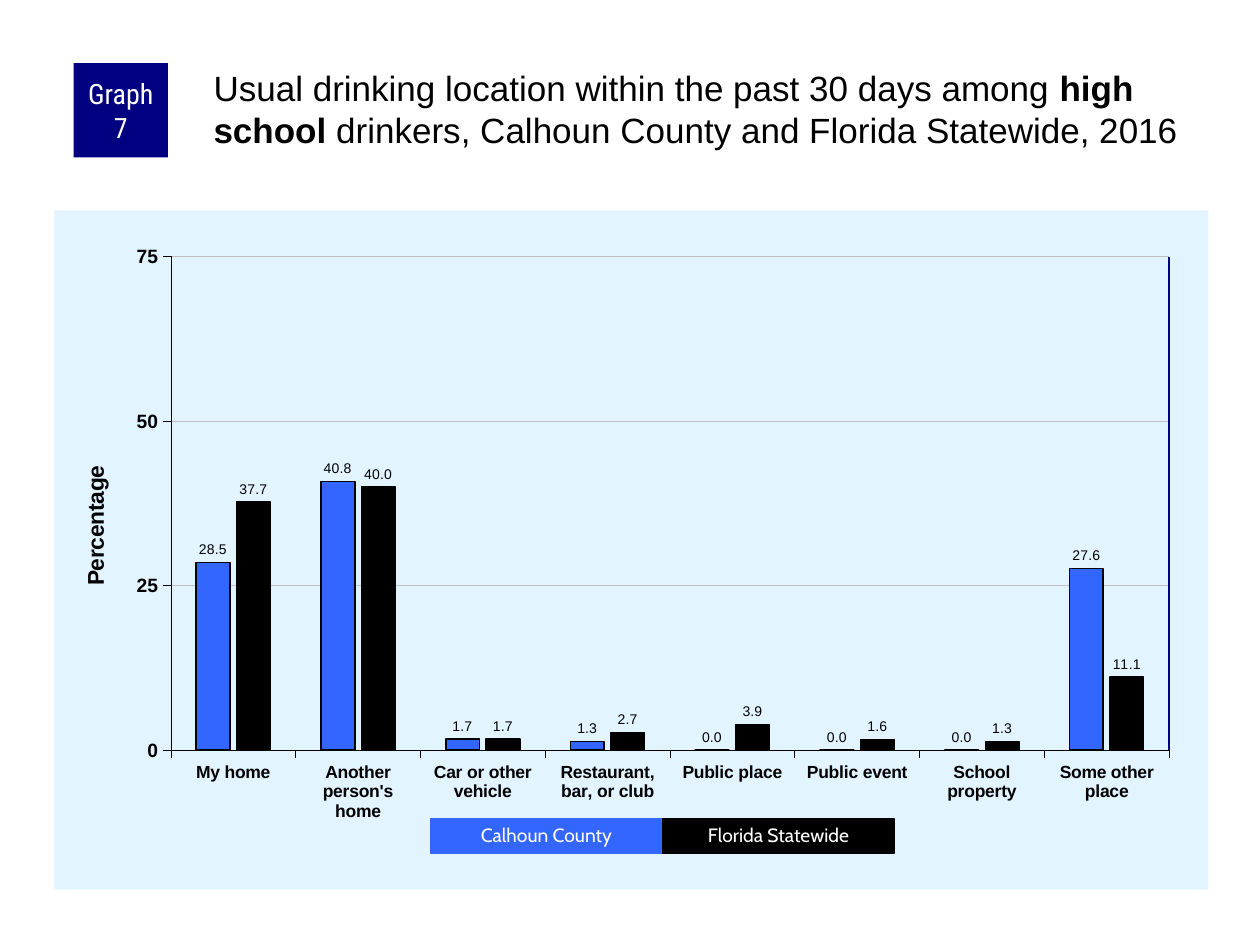
from lxml import etree
from pptx import Presentation
from pptx.chart.data import CategoryChartData
from pptx.dml.color import RGBColor
from pptx.enum.chart import XL_CHART_TYPE, XL_LABEL_POSITION, XL_TICK_MARK
from pptx.enum.shapes import MSO_CONNECTOR, MSO_SHAPE
from pptx.enum.text import MSO_ANCHOR, MSO_AUTO_SIZE, PP_ALIGN
from pptx.oxml import parse_xml
from pptx.oxml.ns import nsdecls, qn
from pptx.util import Pt

COLUMNS = XL_CHART_TYPE.COLUMN_CLUSTERED
OUTSIDE_END = XL_LABEL_POSITION.OUTSIDE_END
TICK_OUT, TICK_NONE = XL_TICK_MARK.OUTSIDE, XL_TICK_MARK.NONE
STRAIGHT = MSO_CONNECTOR.STRAIGHT
RECTANGLE = MSO_SHAPE.RECTANGLE
TOP, MIDDLE = MSO_ANCHOR.TOP, MSO_ANCHOR.MIDDLE
NO_FIT, GROW = MSO_AUTO_SIZE.NONE, MSO_AUTO_SIZE.SHAPE_TO_FIT_TEXT
LEFT, CENTER = PP_ALIGN.LEFT, PP_ALIGN.CENTER

COLORS = {
    "navy": "000080",
    "blue": "3366FF",
    "black": "000000",
    "white": "FFFFFF",
    "panel": "E1F4FF",
    "grid": "C0C0C0",
}
CATEGORIES = [
    "My home", "Another person's home", "Car or other vehicle",
    "Restaurant, bar, or club", "Public place", "Public event",
    "School property", "Some other place",
]
SERIES = [
    ("Calhoun County", [28.5, 40.8, 1.7, 1.3, 0, 0, 0, 27.6], "blue", 1),
    ("Florida Statewide", [37.7, 40, 1.7, 2.7, 3.9, 1.6, 1.3, 11.1], "black", 0.75),
]
CHART_BOX = (31, 120.2, 659.5, 388.1)
PLOT = (0.101, 0.068, 0.865, 0.727)


def color(name):
    """Return the named colour."""
    return RGBColor.from_string(COLORS[name])


def style_font(font, size, fill="black", face="Arial", bold=False):
    """Format a font."""
    font.name, font.size, font.bold = face, Pt(size), bold
    font.color.rgb = color(fill)


def write(para, text, **style):
    """Add a formatted span of text to a paragraph."""
    span = para.add_run()
    span.text = text
    style_font(span.font, **style)


def style_line(line, name, width):
    """Give a line its colour and width."""
    line.color.rgb = color(name)
    line.width = Pt(width)


def place_layout(parent, after, x, y, w=None, h=None):
    """Set the manual layout of a chart part."""
    for old in parent.findall(qn("c:layout")):
        parent.remove(old)
    values = {"xMode": "edge", "yMode": "edge", "x": x, "y": y, "w": w, "h": h}
    if w is not None:
        values = {"layoutTarget": "inner", **values}
    layout = etree.Element(qn("c:layout"))
    manual = etree.SubElement(layout, qn("c:manualLayout"))
    for tag, value in values.items():
        if value is not None:
            etree.SubElement(manual, qn(f"c:{tag}")).set("val", str(value))
    if after is None:
        parent.insert(0, layout)
    else:
        after.addnext(layout)


class GraphPage:
    """Holds the text style and the page that is being built."""

    def __init__(self, page):
        """Start on a page."""
        self.page = page

    def title(self, box, spans, size):
        """Fill and place the title from (text, bold) spans."""
        title = self.page.shapes.title
        title.left, title.top, title.width, title.height = map(Pt, box)
        frame = title.text_frame
        frame.word_wrap, frame.auto_size = True, NO_FIT
        frame.vertical_anchor = TOP
        frame.margin_left = frame.margin_top = Pt(2)
        frame.margin_right = frame.margin_bottom = 0
        para = frame.paragraphs[0]
        para.alignment = LEFT
        for text, bold in spans:
            write(para, text, size=size, bold=bold)

    def block(self, box, text, fill, size, face, outline=False, margins=None, spacing=None):
        """Add a filled rectangle with centred white text."""
        block = self.page.shapes.add_shape(RECTANGLE, *map(Pt, box))
        block.shadow.inherit = False
        block.fill.solid()
        block.fill.fore_color.rgb = color(fill)
        if outline:
            style_line(block.line, fill, 0.75)
        else:
            block.line.fill.background()
        frame = block.text_frame
        frame.word_wrap, frame.vertical_anchor = True, MIDDLE
        if outline:
            frame.auto_size = GROW
        if margins:
            frame.margin_left = frame.margin_right = Pt(margins[0])
            frame.margin_top = frame.margin_bottom = Pt(margins[1])
        para = frame.paragraphs[0]
        para.alignment = CENTER
        if spacing:
            para.line_spacing = spacing
        write(para, text, size=size, fill="white", face=face)

    def rule(self, start, end, name, width):
        """Add a straight line."""
        rule = self.page.shapes.add_connector(STRAIGHT, *map(Pt, start + end))
        style_line(rule.line, name, width)
        etree.SubElement(rule.element.spPr, qn("a:effectLst"))

    def chart(self, box):
        """Add the clustered column chart."""
        data = CategoryChartData(number_format="0.0")
        data.categories = CATEGORIES
        for name, values, _, _ in SERIES:
            data.add_series(name, values)
        chart = self.page.shapes.add_chart(COLUMNS, *map(Pt, box), data).chart
        chart.has_legend = chart.has_title = False
        style_font(chart.font, 11.5)
        chart.element.find(qn("c:txPr")).addprevious(parse_xml(
            f'<c:spPr {nsdecls("c", "a")}><a:solidFill><a:srgbClr val="{COLORS["panel"]}"/>'
            "</a:solidFill><a:ln><a:noFill/></a:ln></c:spPr>"))

        plot = chart.plots[0]
        plot.gap_width, plot.overlap, plot.vary_by_categories = 150, -20, False
        for series, (_, _, fill, width) in zip(plot.series, SERIES):
            series.invert_if_negative = False
            series.format.fill.solid()
            series.format.fill.fore_color.rgb = color(fill)
            style_line(series.format.line, "black", width)
            labels = series.data_labels
            labels.show_value, labels.position = True, OUTSIDE_END
            labels.number_format, labels.number_format_is_linked = "0.0", False
            style_font(labels.font, 8)

        for axis, size in ((chart.category_axis, 10), (chart.value_axis, 11)):
            axis.major_tick_mark, axis.minor_tick_mark = TICK_OUT, TICK_NONE
            style_font(axis.tick_labels.font, size, bold=True)
            style_line(axis.format.line, "black", 0.25)
        axis = chart.value_axis
        axis.minimum_scale, axis.maximum_scale, axis.major_unit = 0, 75, 25
        axis.tick_labels.number_format = "0"
        axis.tick_labels.number_format_is_linked = False
        style_line(axis.major_gridlines.format.line, "grid", 0.25)
        para = axis.axis_title.text_frame.paragraphs[0]
        write(para, "Percentage", size=13, bold=True)

        place_layout(chart.element.xpath(".//c:plotArea")[0], None, *PLOT)
        heading = chart.element.xpath(".//c:valAx/c:title")[0]
        place_layout(heading, heading.find(qn("c:tx")), 0.02, 0.37)


def main():
    """Build the slide and save it."""
    deck = Presentation()
    deck.slide_width, deck.slide_height = Pt(720), Pt(540)
    graph = GraphPage(deck.slides.add_slide(deck.slide_layouts[5]))

    graph.chart(CHART_BOX)
    left, top, width, height = CHART_BOX
    right = left + width * (PLOT[0] + PLOT[2])
    plot_top = top + height * PLOT[1]
    graph.rule((right, plot_top), (right, plot_top + height * PLOT[3]), "navy", 1)

    graph.block((42, 36, 54, 54), "Graph 7", "navy", 16, "Roboto Condensed", margins=(3.6, 0))
    graph.title((120, 36, 570, 60), [
        ("Usual drinking location within the past 30 days among ", False),
        ("high school", True),
        (" drinkers, Calhoun County and Florida Statewide, 2016", False),
    ], 20)
    key_width = 132.6
    for index, (name, _, fill, _) in enumerate(SERIES):
        graph.block((246 + index * key_width, 468, key_width, 19.5), name, fill, 11,
                    "Cabin", outline=True, spacing=0.9)
    deck.save("out.pptx")


if __name__ == "__main__":
    main()
